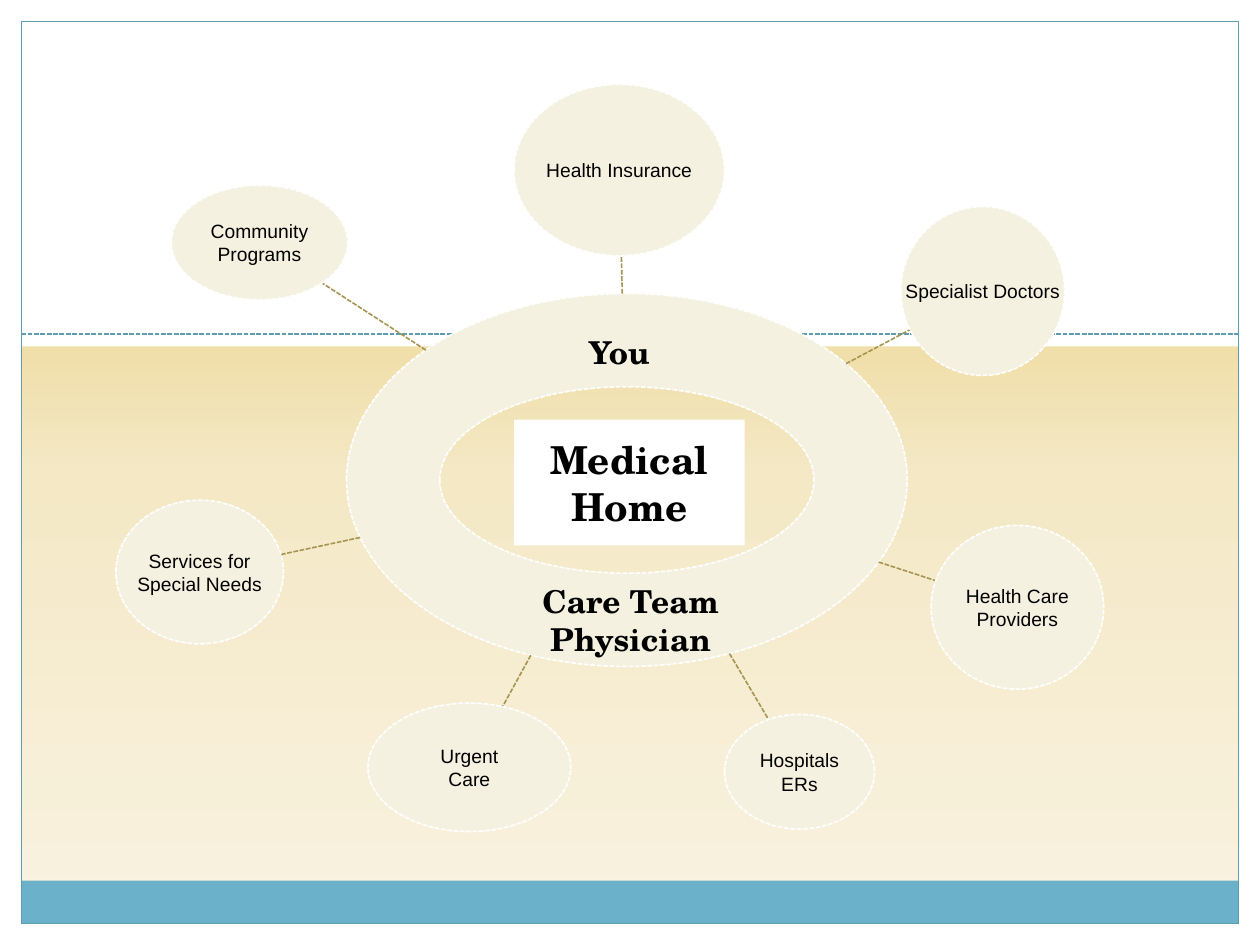
from copy import deepcopy
from math import hypot
from typing import NamedTuple

from lxml.etree import SubElement
from pptx import Presentation
from pptx.dml.color import RGBColor
from pptx.enum.dml import MSO_LINE
from pptx.enum.shapes import MSO_CONNECTOR, MSO_SHAPE
from pptx.enum.text import MSO_ANCHOR, PP_ALIGN
from pptx.oxml.ns import qn
from pptx.util import Inches, Pt

CELL = Inches(0.1)  # the slide is a grid of 100 columns by 75 rows
COLORS = {
    "white": "FFFFFF", "black": "000000", "cream": "F5F1E0",
    "blue": "6BB1C9", "blue_line": "5E9CB1", "olive": "A59452",
    "sand": "EFDCA0", "pale_sand": "F4E8C5", "ivory": "F9F3E2",
}
BACKDROP = [(0.33, "sand"), (0.5, "pale_sand"), (1, "ivory")]
FRAME_LINE = {"color": "blue_line", "width": 0.75}
RULE_LINE = {"color": "blue_line", "width": 0.9, "dash_style": MSO_LINE.SQUARE_DOT}
RING_LINE = {**RULE_LINE, "color": "white"}
SPOKE_LINE = {**RULE_LINE, "color": "olive"}
NODE_FONT = {"name": "Arial", "size": Pt(11), "bold": False}
HUB_FONT = {"name": "TeX Gyre Schola", "size": Pt(18), "bold": True}
HOME_FONT = {**HUB_FONT, "size": Pt(22)}

# Columns and rows within the diagram: left, top, width, height
RING = (18.3, 16.6, 44.5, 29.6)
SERVICES = [
    (["Health Insurance"], (31.6, 0, 16.7, 13.6)),
    (["Specialist Doctors"], (62.3, 9.7, 13, 13.4)),
    (["Health Care Providers"], (64.7, 35, 13.7, 13)),
    (["Hospitals", "ERs"], (48.3, 50, 11.9, 9.1)),
    (["Urgent", "Care"], (20, 49.1, 16.1, 10.2)),
    (["Services for Special Needs"], (0, 33, 13.3, 11.4)),
    (["Community Programs"], (4.4, 8, 14, 9.1)),
]


class Box(NamedTuple):
    left: float
    top: float
    width: float
    height: float

    def area(self, left, top, width, height):
        return Box(self.left + left, self.top + top, width, height)

    def center(self):
        return self.left + self.width / 2, self.top + self.height / 2

    def edge_toward(self, other):
        """Point where the inscribed ellipse meets the line to another centre."""
        (x, y), (to_x, to_y) = self.center(), other.center()
        dx, dy = to_x - x, to_y - y
        reach = 1 / hypot(dx / (self.width / 2), dy / (self.height / 2))
        return x + dx * reach, y + dy * reach


def emu(cells):
    return [round(value * CELL) for value in cells]


def rgb(name):
    return RGBColor.from_string(COLORS[name])


def style_line(line, color, width, dash_style=None):
    line.color.rgb = rgb(color)
    line.width = Pt(width)
    if dash_style:
        line.dash_style = dash_style


def add_shape(slide, preset, box, fill=None, line=None):
    shape = slide.shapes.add_shape(preset, *emu(box))
    shape.shadow.inherit = False
    if fill:
        shape.fill.solid()
        shape.fill.fore_color.rgb = rgb(fill)
    else:
        shape.fill.background()
    if line:
        style_line(shape.line, **line)
    else:
        shape.line.fill.background()
    return shape


def add_line(slide, start, end, line):
    connector = slide.shapes.add_connector(
        MSO_CONNECTOR.STRAIGHT, *emu((*start, *end)))
    style_line(connector.line, **line)
    SubElement(connector._element.spPr, qn("a:effectLst"))


def write_text(shape, lines, font, inset=None):
    frame = shape.text_frame
    frame.word_wrap = True
    frame.vertical_anchor = MSO_ANCHOR.MIDDLE
    if inset is not None:
        for side in ("left", "top", "right", "bottom"):
            setattr(frame, f"margin_{side}", Inches(inset))
    for index, text in enumerate(lines):
        paragraph = frame.add_paragraph() if index else frame.paragraphs[0]
        paragraph.alignment = PP_ALIGN.CENTER
        run = paragraph.add_run()
        run.text = text
        run.font.color.rgb = rgb("black")
        for key, value in font.items():
            setattr(run.font, key, value)


def add_label(slide, box, lines, font, inset=None):
    write_text(slide.shapes.add_textbox(*emu(box)), lines, font, inset)


def paint_backdrop(slide):
    fill = slide.background.fill
    fill.gradient()
    fill.gradient_angle = 270
    stops = slide._element.find(".//" + qn("a:gsLst"))
    stops.append(deepcopy(stops[0]))
    for stop, (position, color) in zip(fill.gradient_stops, BACKDROP):
        stop.position = position
        stop.color.rgb = rgb(color)


def draw_frame(slide, box):
    """White margins, upper panel, dashed rule, footer band and outline."""
    margin, panel_height, rule_row, band_height = 1.7, 27.5, 26.5, 3.4
    inner = box.area(margin, margin,
                     box.width - 2 * margin, box.height - 2 * margin)
    right, bottom = box.width - margin, box.height - margin
    for place in [
        (0, bottom, box.width, margin),
        (right, 0, margin, box.height),
        (0, 0, margin, box.height),
        (0, 0, box.width, panel_height),
    ]:
        add_shape(slide, MSO_SHAPE.RECTANGLE, box.area(*place), "white")
    band = box.area(margin, bottom - band_height, inner.width, band_height)
    add_shape(slide, MSO_SHAPE.RECTANGLE, band, "blue")
    row = box.top + rule_row
    add_line(slide, (inner.left, row), (inner.left + inner.width, row), RULE_LINE)
    add_shape(slide, MSO_SHAPE.RECTANGLE, inner, line=FRAME_LINE)


def draw_service(slide, box, ring, lines):
    """A service ellipse with its spoke from the ring."""
    add_line(slide, ring.edge_toward(box), box.edge_toward(ring), SPOKE_LINE)
    add_shape(slide, MSO_SHAPE.OVAL, box, "cream", RING_LINE)
    add_label(slide, box, lines, NODE_FONT, inset=0.01)


def draw_diagram(slide, box):
    ring = box.area(*RING)
    add_shape(slide, MSO_SHAPE.DONUT, ring, "cream", RING_LINE)
    for lines, place in SERVICES:
        draw_service(slide, box.area(*place), ring, lines)
    add_label(slide, box.area(34.1, 19.1, 11.7, 4.2), ["You"], HUB_FONT)
    home = add_shape(slide, MSO_SHAPE.RECTANGLE,
                     box.area(31.6, 26.6, 18.3, 10), "white")
    write_text(home, ["Medical", "Home"], HOME_FONT)
    add_label(slide, box.area(32.5, 40, 16.7, 5),
              ["Care Team", "Physician"], HUB_FONT)


def main():
    deck = Presentation()
    deck.slide_width, deck.slide_height = emu((100, 75))
    slide = deck.slides.add_slide(deck.slide_layouts[6])
    paint_backdrop(slide)
    draw_frame(slide, Box(0, 0, 100, 75))
    draw_diagram(slide, Box(9.2, 6.7, 78.4, 59.3))
    deck.save("out.pptx")


if __name__ == "__main__":
    main()
